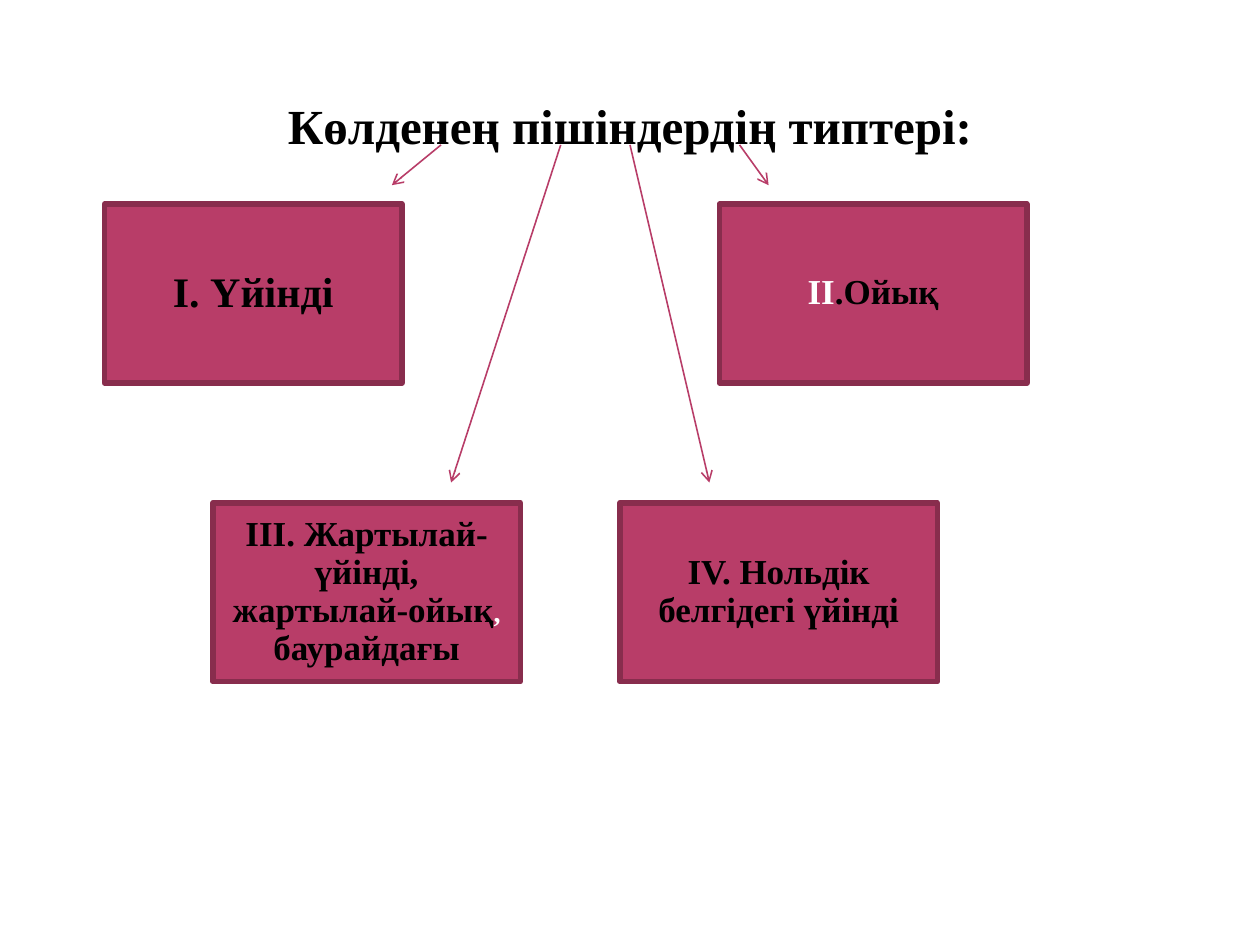
"""Build a slide showing the types of cross-sections."""
from lxml import etree
from pptx import Presentation
from pptx import util as u
from pptx.dml.color import RGBColor
from pptx.enum import shapes, text
from pptx.oxml.ns import qn

COLORS = {"fill": "B83D68", "border": "882D4D", "dark": "000000", "light": "FFFFFF"}
FONT = "Times New Roman"
TITLE = [("Көлденең пішіндердің типтері:", 28, "dark")]
BOX_HEIGHT = 1.42
UPPER_ROW, LOWER_ROW = 1.62, 3.99
TYPES = [
    (0.83, UPPER_ROW, 2.36, [("I. Үйінді", 24, "dark")]),
    (5.71, UPPER_ROW, 2.44, [("II", 20, "light"), (".Ойық", 20, "dark")]),
    (1.69, LOWER_ROW, 2.44, [("III. Жартылай-үйінді, жартылай-ойық", 20, "dark"),
                             (", ", 16, "light"), ("баурайдағы", 20, "dark")]),
    (4.92, LOWER_ROW, 2.52, [("IV. Нольдік белгідегі үйінді", 20, "dark")]),
]
ARROW_TOP = 1.15
ARROWS = [(3.5, 3.11, 1.47), (5.87, 6.1, 1.47), (4.45, 3.58, 3.83), (5, 5.63, 3.83)]


def color(name):
    return RGBColor.from_string(COLORS[name])


def write(frame, spans):
    frame.word_wrap = True
    para = frame.paragraphs[0]
    para.alignment = text.PP_ALIGN.CENTER
    para.line_spacing = 0.9
    para.font.name = FONT
    para.font.bold = True
    for wording, size, shade in spans:
        span = para.add_run()
        span.text = wording
        span.font.size = u.Pt(size)
        span.font.color.rgb = color(shade)


def add_title(page):
    box = page.shapes.add_textbox(0, u.Inches(0.21), u.Inches(10), u.Inches(6.49))
    box.text_frame.margin_top = u.Inches(0.6)
    write(box.text_frame, TITLE)


def add_type(page, left, top, width, spans):
    box = page.shapes.add_shape(shapes.MSO_SHAPE.RECTANGLE, u.Inches(left), u.Inches(top),
                                u.Inches(width), u.Inches(BOX_HEIGHT))
    box.shadow.inherit = False
    box.fill.solid()
    box.fill.fore_color.rgb = color("fill")
    box.line.color.rgb = color("border")
    box.line.width = u.Pt(3.15)
    etree.SubElement(box.line._get_or_add_ln(), qn("a:round"))
    box.text_frame.vertical_anchor = text.MSO_ANCHOR.MIDDLE
    write(box.text_frame, spans)


def add_arrow(page, start, end, bottom):
    arrow = page.shapes.add_connector(shapes.MSO_CONNECTOR.STRAIGHT, u.Inches(start),
                                      u.Inches(ARROW_TOP), u.Inches(end), u.Inches(bottom))
    arrow.line.color.rgb = color("fill")
    arrow.line.width = u.Pt(0.9)
    etree.SubElement(arrow.line._get_or_add_ln(), qn("a:tailEnd"), type="arrow")
    etree.SubElement(arrow._element.spPr, qn("a:effectLst"))


def main():
    deck = Presentation()
    deck.slide_width, deck.slide_height = u.Inches(10), u.Inches(7.5)
    page = deck.slides.add_slide(deck.slide_layouts[6])
    add_title(page)
    for entry in TYPES:
        add_type(page, *entry)
    for ends in ARROWS:
        add_arrow(page, *ends)
    deck.save("out.pptx")


if __name__ == "__main__":
    main()
